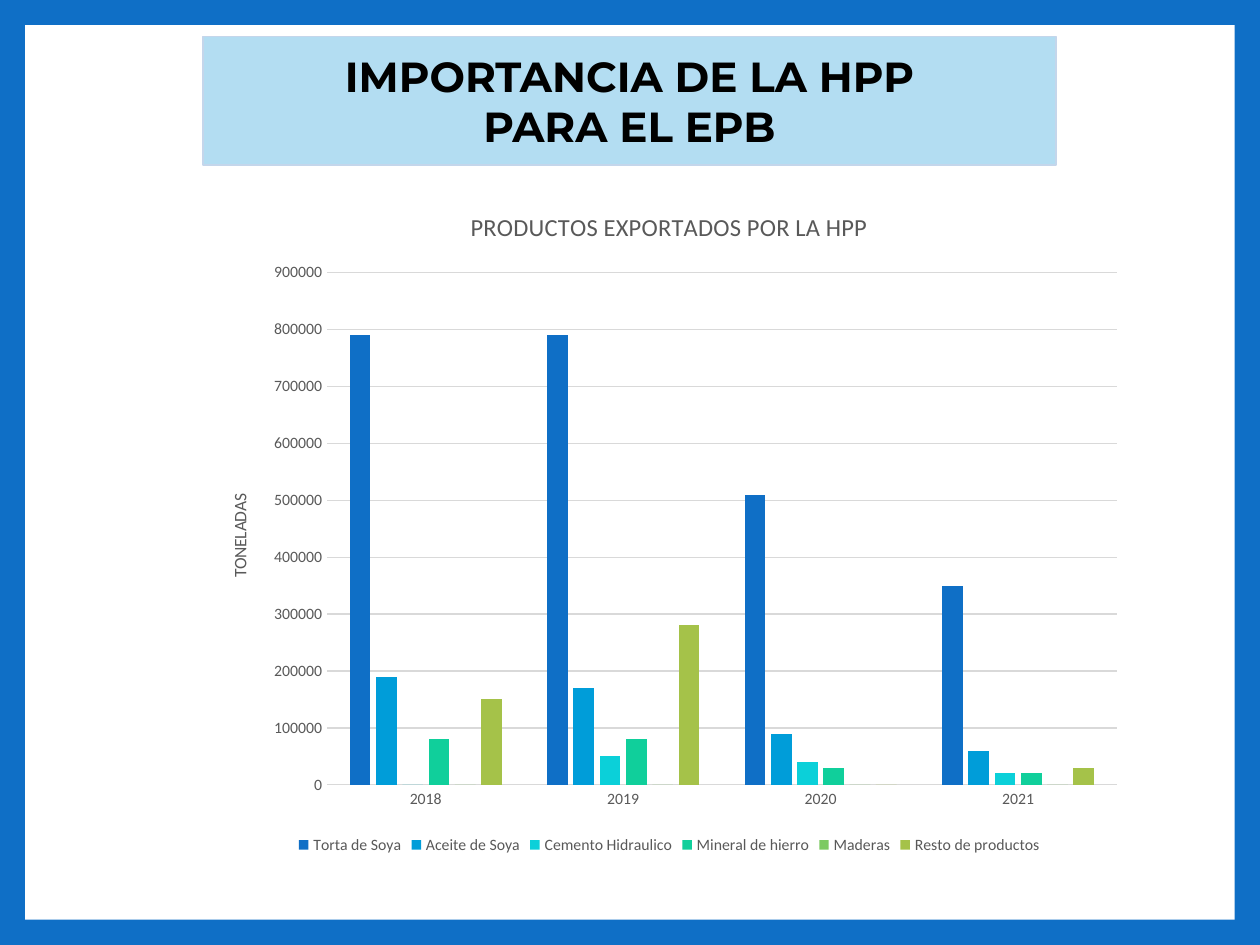
from dataclasses import dataclass

import pptx
import pptx.chart.data
import pptx.dml.color
import pptx.enum.chart
import pptx.enum.shapes
import pptx.enum.text
import pptx.oxml
import pptx.oxml.ns
import pptx.util
from pptx.util import Cm, Pt


@dataclass(frozen=True)
class Theme:
    frame: str = "0F6FC6"
    page: str = "FFFFFF"
    banner: str = "B3DDF2"
    banner_edge: str = "C4D6EB"
    heading: str = "000000"
    label: str = "595959"
    grid: str = "D9D9D9"
    heading_font: str = "Montserrat"
    chart_font: str = "Calibri"
    heading_size: int = 24
    chart_title_size: int = 14
    axis_title_size: int = 10
    label_size: int = 9
    line_width: float = 0.75


@dataclass(frozen=True)
class Product:
    name: str
    tonnes: tuple[int, ...]
    color: str


THEME = Theme()
YEARS = ("2018", "2019", "2020", "2021")
PRODUCTS = (
    Product("Torta de Soya", (790000, 790000, 510000, 350000), "0F6FC6"),
    Product("Aceite de Soya", (190000, 170000, 90000, 60000), "009DD9"),
    Product("Cemento Hidraulico", (0, 50000, 40000, 20000), "0BD0D9"),
    Product("Mineral de hierro", (80000, 80000, 30000, 20000), "10CF9B"),
    Product("Maderas", (0, 0, 0, 0), "7CCA62"),
    Product("Resto de productos", (150000, 280000, 0, 30000), "A5C249"),
)


def rgb(color: str) -> pptx.dml.color.RGBColor:
    return pptx.dml.color.RGBColor.from_string(color)


def paint(fill, color: str) -> None:
    fill.solid()
    fill.fore_color.rgb = rgb(color)


def draw_line(line, color: str) -> None:
    paint(line.fill, color)
    line.width = Pt(THEME.line_width)


def style_font(font, name: str, size: int, color: str, bold: bool = False) -> None:
    font.name, font.size, font.bold = name, Pt(size), bold
    font.color.rgb = rgb(color)


def style_label(font, size: int = THEME.label_size) -> None:
    style_font(font, THEME.chart_font, size, THEME.label)


def set_chart_title(titled, text: str, size: int) -> None:
    """Title a chart or one of its axes."""
    frame = titled.text_frame
    frame.text = text
    style_label(frame.paragraphs[0].font, size)


def add_page(slide, width: int, height: int) -> None:
    """Leave an even frame of background around a white page."""
    margin = Cm(0.51)
    page = slide.shapes.add_shape(
        pptx.enum.shapes.MSO_SHAPE.RECTANGLE,
        margin, margin, width - 2 * margin, height - 2 * margin,
    )
    page.shadow.inherit = False
    paint(page.fill, THEME.page)
    page.line.fill.background()


def add_export_chart(slide) -> None:
    exports = pptx.chart.data.CategoryChartData(number_format="General")
    exports.categories = YEARS
    for product in PRODUCTS:
        exports.add_series(product.name, product.tonnes)
    chart = slide.shapes.add_chart(
        pptx.enum.chart.XL_CHART_TYPE.COLUMN_CLUSTERED,
        Cm(4.09), Cm(3.73), Cm(18.8), Cm(13.59), exports,
    ).chart
    style_label(chart.font)
    chart.has_title = True
    set_chart_title(chart.chart_title, "PRODUCTOS EXPORTADOS POR LA HPP", THEME.chart_title_size)

    chart.has_legend = True
    chart.legend.position = pptx.enum.chart.XL_LEGEND_POSITION.BOTTOM
    chart.legend.include_in_layout = False
    style_label(chart.legend.font)

    years, tonnes = chart.category_axis, chart.value_axis
    for axis in (years, tonnes):
        axis.major_tick_mark = pptx.enum.chart.XL_TICK_MARK.NONE
        axis.minor_tick_mark = pptx.enum.chart.XL_TICK_MARK.NONE
        style_label(axis.tick_labels.font)
    draw_line(years.format.line, THEME.grid)
    tonnes.format.line.fill.background()
    tonnes.has_major_gridlines = True
    draw_line(tonnes.major_gridlines.format.line, THEME.grid)
    tonnes.minimum_scale, tonnes.maximum_scale, tonnes.major_unit = 0, 900000, 100000
    tonnes.has_title = True
    set_chart_title(tonnes.axis_title, "TONELADAS", THEME.axis_title_size)

    columns = chart.plots[0]
    columns.vary_by_categories = False
    columns.gap_width, columns.overlap = 219, -27
    for series, product in zip(columns.series, PRODUCTS):
        paint(series.format.fill, product.color)


def add_banner(slide) -> None:
    """Turn the title placeholder into a rounded banner on top of the page."""
    banner = slide.shapes.title
    banner.left, banner.top, banner.width, banner.height = Cm(4.09), Cm(0.74), Cm(17.2), Cm(2.59)
    rounded = pptx.oxml.parse_xml(
        f'<a:prstGeom {pptx.oxml.ns.nsdecls("a")} prst="roundRect"><a:avLst/></a:prstGeom>'
    )
    banner.element.spPr.append(rounded)
    paint(banner.fill, THEME.banner)
    draw_line(banner.line, THEME.banner_edge)

    heading = banner.text_frame
    heading.text = "IMPORTANCIA DE LA HPP\nPARA EL EPB"
    heading.word_wrap = True
    heading.auto_size = pptx.enum.text.MSO_AUTO_SIZE.NONE
    heading.vertical_anchor = pptx.enum.text.MSO_ANCHOR.MIDDLE
    for paragraph in heading.paragraphs:
        paragraph.alignment = pptx.enum.text.PP_ALIGN.CENTER
        style_font(paragraph.font, THEME.heading_font, THEME.heading_size, THEME.heading, bold=True)
    slide.shapes.element.append(banner.element)


def main() -> None:
    deck = pptx.Presentation()
    deck.slide_width, deck.slide_height = Cm(25.4), Cm(19.05)
    slide = deck.slides.add_slide(deck.slide_layouts.get_by_name("Title Only"))
    paint(slide.background.fill, THEME.frame)
    add_page(slide, deck.slide_width, deck.slide_height)
    add_export_chart(slide)
    add_banner(slide)
    deck.save("out.pptx")


if __name__ == "__main__":
    main()
